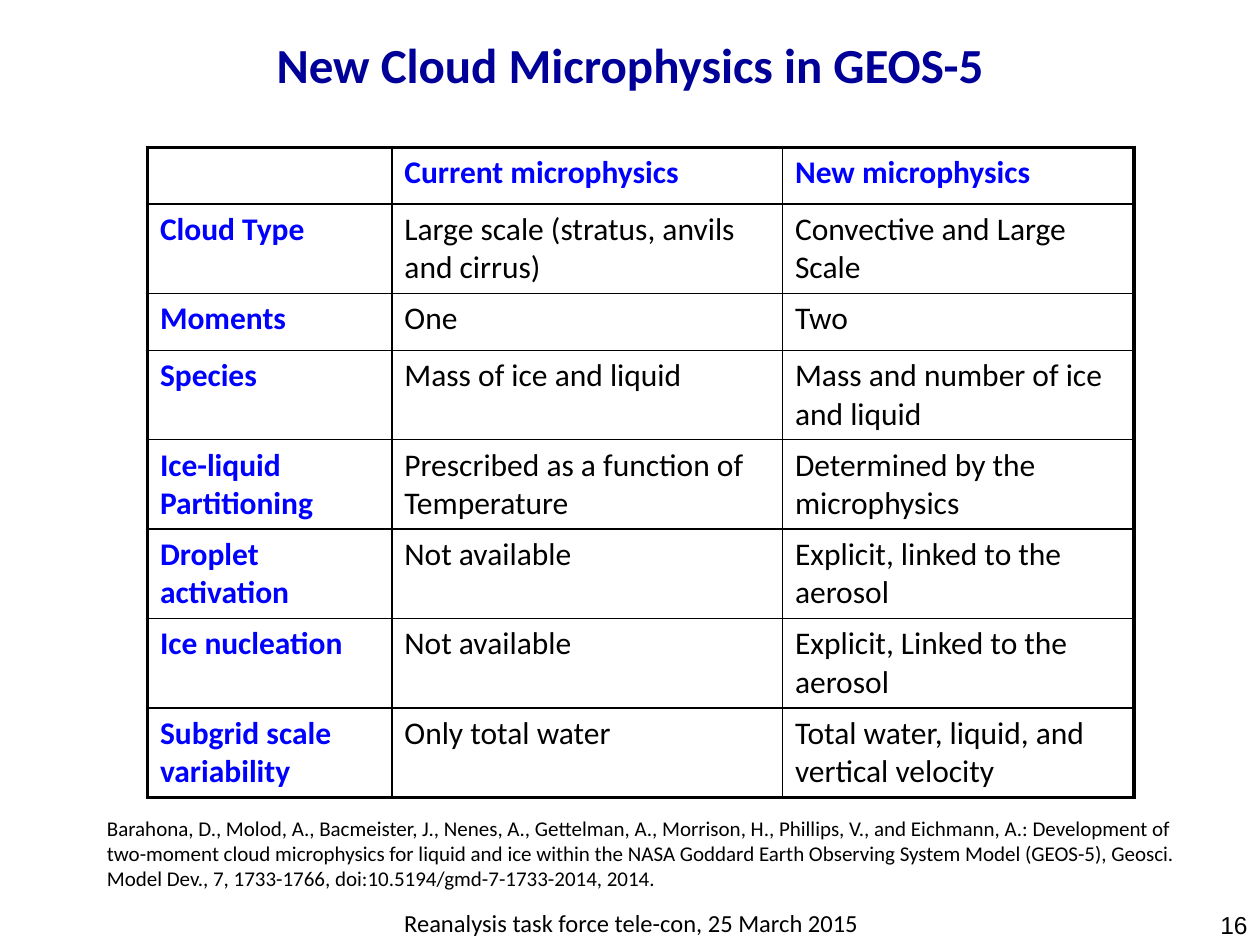
import pptx
import pptx.util
import pptx.dml.color
import pptx.enum.text
import pptx.oxml.ns
from lxml import etree

Inches = pptx.util.Inches
Pt = pptx.util.Pt
RGBColor = pptx.dml.color.RGBColor
ALIGN = pptx.enum.text.PP_ALIGN
ANCHOR = pptx.enum.text.MSO_ANCHOR
qn = pptx.oxml.ns.qn

NAVY = RGBColor(0x00, 0x00, 0x99)
BLUE = RGBColor(0x00, 0x00, 0xFF)
BLACK = RGBColor(0x00, 0x00, 0x00)

TITLE = "New Cloud Microphysics in GEOS-5"
FOOTER = "Reanalysis task force tele-con, 25 March 2015"
PAGE = "16"
CITE = (
    "Barahona, D., Molod, A., Bacmeister, J., Nenes, A., Gettelman, A., "
    "Morrison, H., Phillips, V., and Eichmann, A.: Development of two-moment "
    "cloud microphysics for liquid and ice within the NASA Goddard Earth "
    "Observing System Model (GEOS-5), Geosci. Model Dev., 7, 1733-1766, "
    "doi:10.5194/gmd-7-1733-2014, 2014."
)
ROWS = [
    ("", "Current microphysics", "New microphysics"),
    ("Cloud Type", "Large scale (stratus, anvils and cirrus)",
     "Convective and Large Scale"),
    ("Moments", "One", "Two"),
    ("Species", "Mass of ice and liquid", "Mass and number of ice and liquid"),
    ("Ice-liquid Partitioning", "Prescribed as a function of Temperature",
     "Determined by the microphysics"),
    ("Droplet activation", "Not available", "Explicit, linked to the aerosol"),
    ("Ice nucleation", "Not available", "Explicit, Linked to the aerosol"),
    ("Subgrid scale variability", "Only total water",
     "Total water, liquid, and vertical velocity"),
]
WIDTHS = [1.94, 3.1, 2.79]
SHORT, TALL = 0.45, 0.71
THIN, THICK = 1, 2.25


def style(para, size, color=BLACK, bold=False, face="Calibri"):
    font = para.font
    font.name, font.size, font.bold = face, Pt(size), bold
    font.color.rgb = color


def add_text(slide, place, text, size, align=ALIGN.LEFT, **look):
    box = slide.shapes.add_textbox(*map(Inches, place))
    frame = box.text_frame
    frame.word_wrap = True
    para = frame.paragraphs[0]
    para.text, para.alignment = text, align
    style(para, size, **look)
    return frame


def add_edge(cell, side, width):
    props = cell._tc.get_or_add_tcPr()
    line = etree.SubElement(props, qn("a:ln" + side), w=str(Pt(width)))
    fill = etree.SubElement(line, qn("a:solidFill"))
    etree.SubElement(fill, qn("a:srgbClr"), val=str(BLACK))


def add_grid(slide):
    tall = [TALL if i in (1, 3, 4, 5, 6, 7) else SHORT
            for i in range(len(ROWS))]
    grid = slide.shapes.add_table(
        len(ROWS), len(WIDTHS), Inches(1.17), Inches(1.17),
        Inches(sum(WIDTHS)), Inches(sum(tall))).table
    grid.first_row = grid.horz_banding = False
    for col, width in zip(grid.columns, WIDTHS):
        col.width = Inches(width)
    for row, height in zip(grid.rows, tall):
        row.height = Inches(height)
    for i, row in enumerate(ROWS):
        for j, text in enumerate(row):
            cell = grid.cell(i, j)
            cell.text = text
            head = i == 0 or j == 0
            style(cell.text_frame.paragraphs[0], 18,
                  BLUE if head else BLACK, head)
            outer = {"L": j == 0, "R": j == len(WIDTHS) - 1,
                     "T": i == 0, "B": i == len(ROWS) - 1}
            for side, edge in outer.items():
                add_edge(cell, side, THICK if edge else THIN)
            cell.fill.background()


def main():
    deck = pptx.Presentation()
    deck.slide_width, deck.slide_height = Inches(10), Inches(7.5)
    slide = deck.slides.add_slide(deck.slide_layouts[6])
    add_text(slide, (3.11, 7.16, 3.84, 0.34), FOOTER, 14)
    title = add_text(slide, (0.5, 0.17, 9, 0.67), TITLE, 28, ALIGN.CENTER,
                     color=NAVY, bold=True)
    title.vertical_anchor = ANCHOR.MIDDLE
    add_grid(slide)
    add_text(slide, (0.75, 6.42, 8.92, 0.71), CITE, 12)
    add_text(slide, (7.67, 7.17, 2.33, 0.33), PAGE, 14, ALIGN.RIGHT,
             face="Arial")
    deck.save("out.pptx")


if __name__ == "__main__":
    main()
